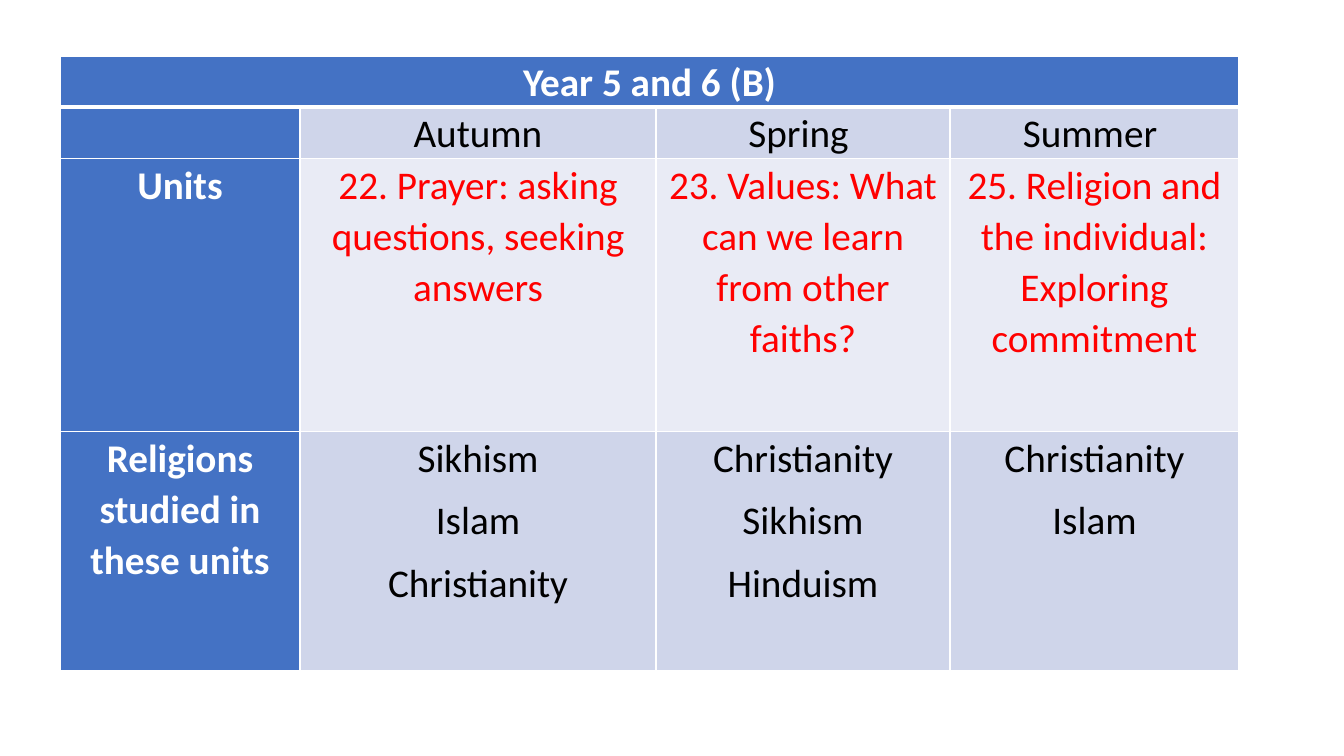
from lxml.etree import SubElement
from pptx import Presentation
from pptx.dml.color import RGBColor
from pptx.enum.text import PP_ALIGN
from pptx.oxml.ns import qn
from pptx.util import Pt

SCALE = 914400 / 100.8
BLUE, WHITE, BLACK, RED = "4472C4", "FFFFFF", "000000", "FF0000"
DARK, LIGHT = "CFD5EA", "E9EBF5"

COLS = [240, 356, 294, 289]
ROWS = [
    (51, BLUE, WHITE, ["Year 5 and 6 (B)", "", "", ""]),
    (51, DARK, BLACK, ["", "Autumn", "Spring ", "Summer "]),
    (273, LIGHT, RED, [
        "Units",
        "22. Prayer: asking questions, seeking answers",
        "23. Values: What can we learn from other faiths?",
        "25. Religion and the individual: Exploring commitment",
    ]),
    (239, DARK, BLACK, [
        "Religions studied in these units",
        "Sikhism\nIslam\nChristianity",
        "Christianity\nSikhism\nHinduism",
        "Christianity\nIslam",
    ]),
]


def px(n):
    return round(n * SCALE)


def color(code):
    return RGBColor.from_string(code)


class Deck:
    font = "Calibri"
    size = 28

    def __init__(self, width, height):
        self.file = Presentation()
        self.file.slide_width = px(width)
        self.file.slide_height = px(height)
        self.slide = self.file.slides.add_slide(self.file.slide_layouts[6])

    def border(self, cell, top, bottom):
        props = cell._tc.get_or_add_tcPr()
        for side, width in (("L", 1), ("R", 1), ("T", top), ("B", bottom)):
            line = SubElement(props, qn(f"a:ln{side}"), w=str(Pt(width)))
            fill = SubElement(line, qn("a:solidFill"))
            SubElement(fill, qn("a:srgbClr"), val=WHITE)

    def label(self, cell, text, ink, bold):
        cell.margin_left = cell.margin_right = px(7)
        cell.margin_top = cell.margin_bottom = 0
        cell.text_frame.text = text
        for para in cell.text_frame.paragraphs:
            para.alignment = PP_ALIGN.CENTER
            para.line_spacing = 1.07
            para.space_after = Pt(8)
            for run in para.runs:
                run.font.name = self.font
                run.font.size = Pt(self.size)
                run.font.bold = bold
                run.font.color.rgb = color(ink)

    def table(self, left, top, cols, rows):
        high = sum(row[0] for row in rows)
        frame = self.slide.shapes.add_table(
            len(rows), len(cols), px(left), px(top), px(sum(cols)), px(high))
        grid = frame.table
        for col, width in zip(grid.columns, cols):
            col.width = px(width)
        for r, (height, back, ink, texts) in enumerate(rows):
            grid.rows[r].height = px(height)
            for c, text in enumerate(texts):
                cell = grid.cell(r, c)
                head = r == 0 or c == 0
                self.border(cell, 3 if r == 1 else 1, 3 if r == 0 else 1)
                cell.fill.solid()
                cell.fill.fore_color.rgb = color(BLUE if head else back)
                self.label(cell, text, WHITE if head else ink, head)
        grid.cell(0, 0).merge(grid.cell(0, len(cols) - 1))


def main():
    deck = Deck(1344, 756)
    deck.table(60, 56, COLS, ROWS)
    deck.file.save("out.pptx")


if __name__ == "__main__":
    main()
